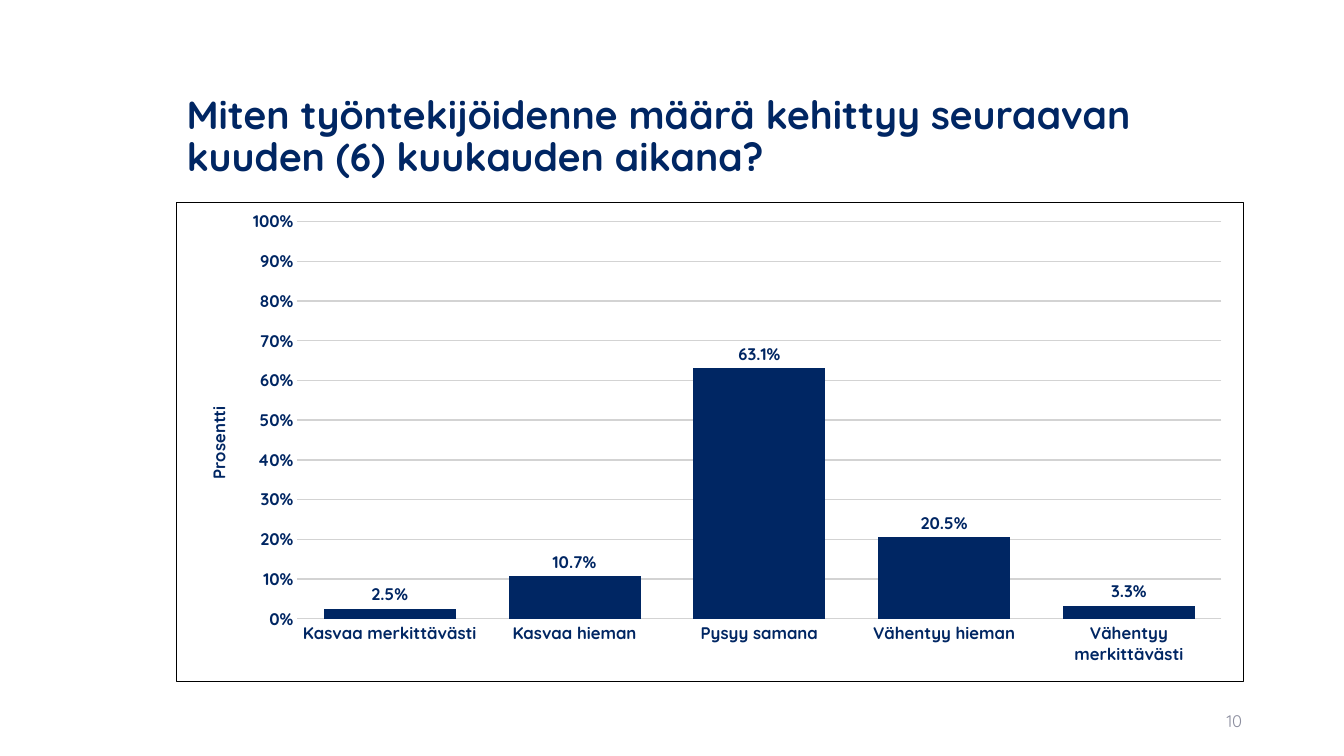
from lxml import etree
from pptx import Presentation
from pptx.chart.data import CategoryChartData
from pptx.dml.color import RGBColor
from pptx.enum.chart import XL_CHART_TYPE, XL_LABEL_POSITION, XL_TICK_MARK
from pptx.enum.text import MSO_ANCHOR, MSO_AUTO_SIZE, PP_ALIGN
from pptx.oxml import parse_xml
from pptx.oxml.ns import nsdecls, qn
from pptx.util import Inches, Pt

NAVY = RGBColor(0x00, 0x26, 0x63)
GREY = RGBColor(0x8C, 0x8E, 0x9F)
GRID = RGBColor(0xD3, 0xD3, 0xD3)
WHITE = RGBColor(0xFF, 0xFF, 0xFF)
BLACK = RGBColor(0x00, 0x00, 0x00)

COLUMN = XL_CHART_TYPE.COLUMN_CLUSTERED
OUTSIDE = XL_LABEL_POSITION.OUTSIDE_END
NO_TICK = XL_TICK_MARK.NONE
MIDDLE = MSO_ANCHOR.MIDDLE
NO_FIT = MSO_AUTO_SIZE.NONE
LEFT, RIGHT = PP_ALIGN.LEFT, PP_ALIGN.RIGHT
TITLE_ONLY = 5

ANSWERS = {
    "Kasvaa merkittävästi": 0.025,
    "Kasvaa hieman": 0.107,
    "Pysyy samana": 0.631,
    "Vähentyy hieman": 0.205,
    "Vähentyy merkittävästi": 0.033,
}


def assign(target, values):
    for name, value in values.items():
        setattr(target, name, value)


def set_layout(parent, index, **shares):
    for old in parent.findall(qn("c:layout")):
        parent.remove(old)
    layout = etree.Element(qn("c:layout"))
    manual = etree.SubElement(layout, qn("c:manualLayout"))
    for tag, value in shares.items():
        etree.SubElement(manual, qn(f"c:{tag}")).set("val", str(value))
    parent.insert(index, layout)


class SurveySlide:
    """Holds the style and the current slide; places are percentages of its size."""

    def __init__(self, deck):
        self.deck = deck
        self.page = deck.slides.add_slide(deck.slide_layouts[TITLE_ONLY])
        self.fill(self.page.background.fill, WHITE)

    def fill(self, fill, color):
        fill.solid()
        fill.fore_color.rgb = color

    def place(self, left, top, width, height):
        across, down = self.deck.slide_width / 100, self.deck.slide_height / 100
        sizes = (left * across, top * down, width * across, height * down)
        return [round(size) for size in sizes]

    def style_font(self, font, size, color, bold):
        assign(font, {"name": "Quicksand", "size": Pt(size), "bold": bold})
        font.color.rgb = color

    def set_text(self, box, text, size, color, bold, align, spacing):
        frame = box.text_frame
        assign(frame, {"word_wrap": True, "auto_size": NO_FIT, "vertical_anchor": MIDDLE})
        para = frame.paragraphs[0]
        assign(para, {"alignment": align, "line_spacing": spacing})
        span = para.add_run()
        span.text = text
        self.style_font(span.font, size, color, bold)

    def title(self, text, place):
        box = self.page.shapes.title
        assign(box, dict(zip(("left", "top", "width", "height"), self.place(*place))))
        self.set_text(box, text, 28, NAVY, True, LEFT, 0.9)

    def page_number(self, text, place):
        box = self.page.shapes.add_textbox(*self.place(*place))
        self.set_text(box, text, 12, GREY, False, RIGHT, 1.0)

    def column_chart(self, answers, axis_name, place):
        data = CategoryChartData(number_format="0.0%")
        data.categories = list(answers)
        data.add_series("Series 1", list(answers.values()))
        chart = self.page.shapes.add_chart(COLUMN, *self.place(*place), data).chart
        assign(chart, {"has_legend": False, "has_title": False})
        self.style_font(chart.font, 12, NAVY, True)
        self.style_columns(chart.plots[0])
        self.style_axes(chart, axis_name)
        self.frame_chart(chart)

    def style_columns(self, plot):
        assign(plot, {"gap_width": 40, "overlap": -2, "vary_by_categories": False,
                      "has_data_labels": True})
        assign(plot.data_labels, {"show_value": True, "number_format": "0.0%",
                                  "number_format_is_linked": False, "position": OUTSIDE})
        self.style_font(plot.data_labels.font, 12, NAVY, True)
        self.fill(plot.series[0].format.fill, NAVY)

    def style_axes(self, chart, axis_name):
        values = chart.value_axis
        for axis in (chart.category_axis, values):
            assign(axis, {"major_tick_mark": NO_TICK, "minor_tick_mark": NO_TICK})
            axis.format.line.fill.background()
        assign(values, {"minimum_scale": 0, "maximum_scale": 1, "major_unit": 0.1,
                        "has_major_gridlines": True, "has_title": True})
        assign(values.tick_labels, {"number_format": "0%", "number_format_is_linked": False})
        line = values.major_gridlines.format.line
        line.width = Pt(1)
        line.color.rgb = GRID
        frame = values.axis_title.text_frame
        frame.text = axis_name
        self.style_font(frame.paragraphs[0].runs[0].font, 12, NAVY, True)

    def frame_chart(self, chart):
        space = chart.element
        area = space.find(".//" + qn("c:plotArea"))
        set_layout(area, 0, layoutTarget="inner", xMode="edge", yMode="edge",
                   x=0.113, y=0.041, w=0.866, h=0.829)
        axis_title = area.find(qn("c:valAx")).find(qn("c:title"))
        set_layout(axis_title, 1, xMode="edge", yMode="edge", x=0.025, y=0.42)
        body = axis_title.find(".//" + qn("a:bodyPr"))
        body.set("rot", "-5400000")
        body.set("vert", "horz")
        border = (f'<c:spPr {nsdecls("c", "a")}><a:solidFill><a:srgbClr val="{WHITE}"/>'
                  f'</a:solidFill><a:ln w="{Pt(0.5)}"><a:solidFill>'
                  f'<a:srgbClr val="{BLACK}"/></a:solidFill></a:ln></c:spPr>')
        space.find(qn("c:chart")).addnext(parse_xml(border))


def main():
    deck = Presentation()
    assign(deck, {"slide_width": Inches(13.33), "slide_height": Inches(7.5)})
    slide = SurveySlide(deck)
    slide.title("Miten työntekijöidenne määrä kehittyy seuraavan kuuden (6) kuukauden aikana?",
                (13.13, 8.53, 79.44, 19.33))
    slide.page_number("10", (70.67, 92.67, 22.5, 5.33))
    slide.column_chart(ANSWERS, "Prosentti", (13.13, 26.67, 79.44, 63.47))
    deck.save("out.pptx")


if __name__ == "__main__":
    main()
